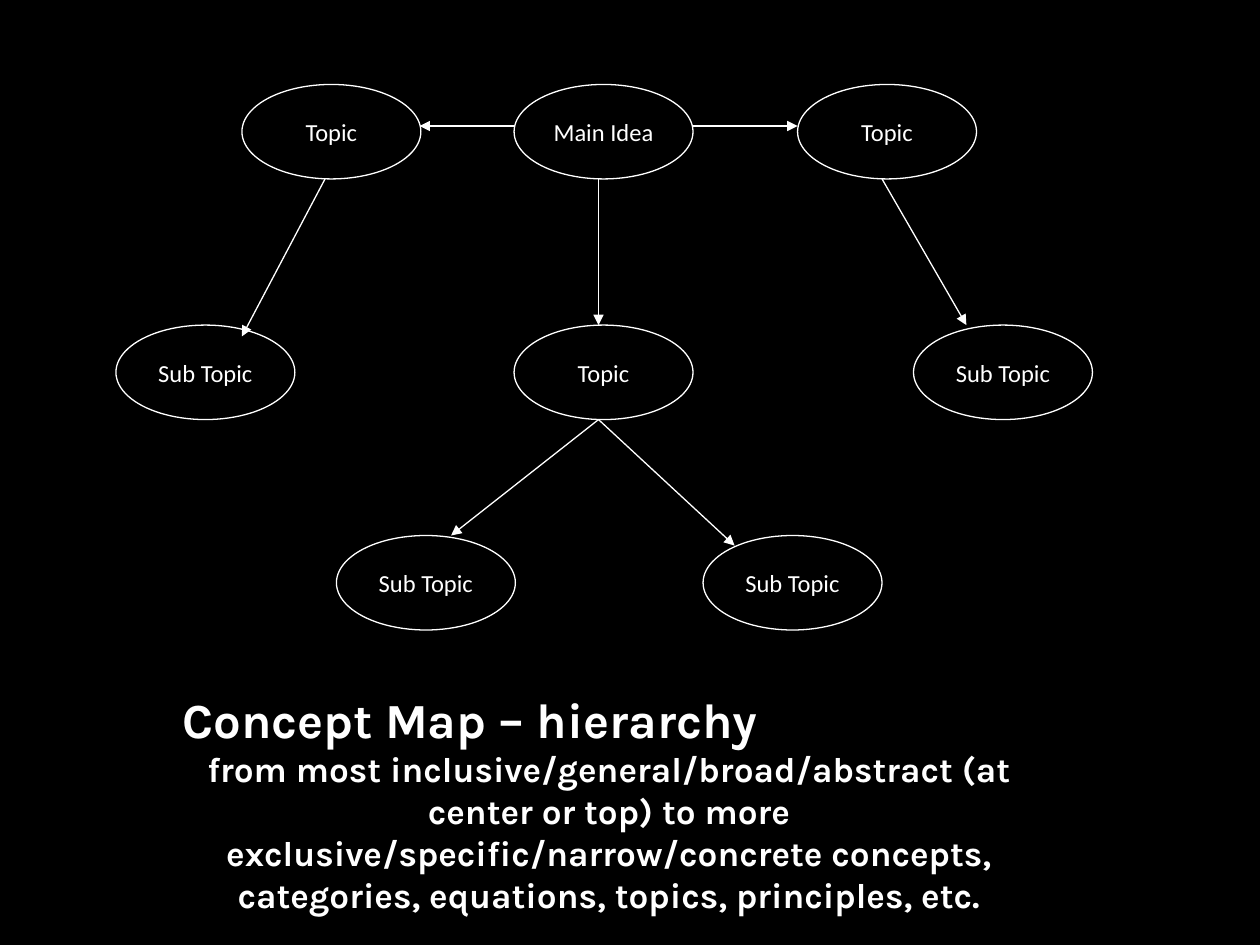
from lxml.etree import SubElement
from pptx import Presentation
from pptx.dml.color import RGBColor
from pptx.enum.shapes import MSO_CONNECTOR, MSO_SHAPE
from pptx.enum.text import MSO_ANCHOR, PP_ALIGN
from pptx.oxml.ns import qn
from pptx.util import Inches, Pt

WHITE, BLACK = "FFFFFF", "000000"
LEFT, MID, RIGHT = 0.92, 4.08, 7.25
TOP, ROW, LOW = 0.67, 2.58, 4.25
WIDE, HIGH = 1.42, 0.75

NODES = [
    ("Main Idea", MID, TOP),
    ("Topic", LEFT + 1, TOP),
    ("Topic", RIGHT - 0.92, TOP),
    ("Topic", MID, ROW),
    ("Sub Topic", LEFT, ROW),
    ("Sub Topic", RIGHT, ROW),
    ("Sub Topic", 2.67, LOW),
    ("Sub Topic", 5.58, LOW),
]
ARROWS = [
    ((MID, 1), (3.33, 1)),
    ((5.5, 1), (6.33, 1)),
    ((4.75, 1.42), (4.75, ROW)),
    ((2.58, 1.42), (1.92, 2.67)),
    ((7, 1.42), (7.67, ROW)),
    ((4.75, 3.33), (3.58, LOW)),
    ((4.75, 3.33), (5.83, 4.33)),
]


def color(code):
    return RGBColor.from_string(code)


def set_line(line):
    line.color.rgb = color(WHITE)
    line.width = Pt(0.75)


def add_run(para, text, size, face, bold=False):
    run = para.add_run()
    run.text = text
    font = run.font
    font.size, font.name, font.bold = Pt(size), face, bold
    font.color.rgb = color(WHITE)


def add_node(slide, text, left, top):
    node = slide.shapes.add_shape(
        MSO_SHAPE.OVAL, Inches(left), Inches(top), Inches(WIDE), Inches(HIGH))
    node.shadow.inherit = False
    node.fill.background()
    set_line(node.line)
    frame = node.text_frame
    frame.word_wrap = False
    frame.vertical_anchor = MSO_ANCHOR.MIDDLE
    para = frame.paragraphs[0]
    para.alignment = PP_ALIGN.CENTER
    add_run(para, text, 14, "Calibri")


def add_arrow(slide, start, end):
    ends = [Inches(n) for n in start + end]
    arrow = slide.shapes.add_connector(MSO_CONNECTOR.STRAIGHT, *ends)
    set_line(arrow.line)
    SubElement(arrow.line._get_or_add_ln(), qn("a:tailEnd"), type="triangle")
    SubElement(arrow._element.spPr, qn("a:effectLst"))


def add_note(slide):
    box = slide.shapes.add_textbox(
        Inches(1.25), Inches(5.42), Inches(7.17), Inches(2.64))
    frame = box.text_frame
    frame.word_wrap = True
    head = frame.paragraphs[0]
    head.alignment = PP_ALIGN.LEFT
    head._p.get_or_add_pPr().set("marL", str(Inches(0.1)))
    add_run(head, "Concept Map – hierarchy", 28, "Karla", True)
    body = frame.add_paragraph()
    body.alignment = PP_ALIGN.CENTER
    add_run(body, "from most inclusive/general/broad/abstract (at center or top) "
            "to more exclusive/specific/narrow/concrete concepts, categories, "
            "equations, topics, principles, etc.", 20, "Karla", True)


def main():
    deck = Presentation()
    deck.slide_width, deck.slide_height = Inches(10), Inches(7.5)
    slide = deck.slides.add_slide(deck.slide_layouts[6])
    back = slide.background.fill
    back.solid()
    back.fore_color.rgb = color(BLACK)
    for node in NODES:
        add_node(slide, *node)
    for start, end in ARROWS:
        add_arrow(slide, start, end)
    add_note(slide)
    deck.save("out.pptx")


if __name__ == "__main__":
    main()
